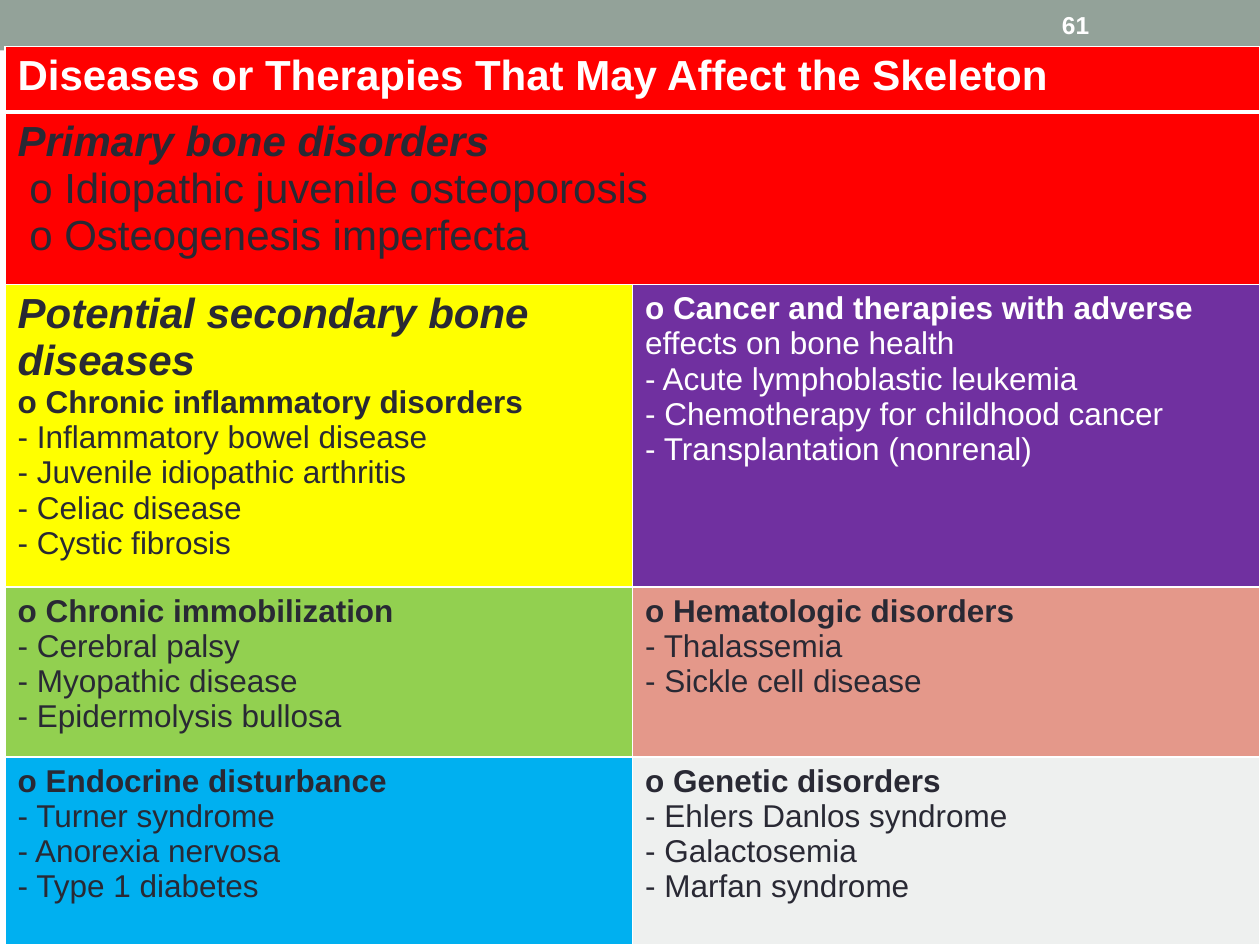
from lxml import etree
from pptx import Presentation
from pptx.dml.color import RGBColor
from pptx.enum.shapes import MSO_SHAPE
from pptx.enum.text import MSO_ANCHOR
from pptx.oxml.ns import qn
from pptx.util import Inches, Pt

RECTANGLE = MSO_SHAPE.RECTANGLE
MIDDLE = MSO_ANCHOR.MIDDLE
FONT = "Arial"
WHITE, DARK, RED = "FFFFFF", "292934", "FF0000"
ROW_HEIGHTS = [0.52, 1.37, 2.25, 1.35, 1.49]

# Each cell: row, column, columns spanned, fill, text colour, paragraphs.
# Each paragraph is a list of (text, size, bold, italic) spans.


def heading(text):
    return [(text, 24, True, True)]


def topic(title, *items):
    return [[(title, 18, True, False)]] + [[("- " + item, 18, False, False)] for item in items]


CELLS = [
    (0, 0, 2, RED, WHITE, [[("Diseases or Therapies That May Affect the Skeleton", 24, True, False)]]),
    (1, 0, 2, RED, DARK, [
        heading("Primary bone disorders"),
        [(" o Idiopathic juvenile osteoporosis", 24, False, False)],
        [(" o Osteogenesis imperfecta", 24, False, False)]]),
    (2, 0, 1, "FFFF00", DARK, [heading("Potential secondary bone diseases")] + topic(
        "o Chronic inflammatory disorders", "Inflammatory bowel disease",
        "Juvenile idiopathic arthritis", "Celiac disease", "Cystic fibrosis")),
    (2, 1, 1, "7030A0", WHITE, [
        [("o Cancer and therapies with adverse ", 18, True, False),
         ("effects on bone health", 18, False, False)]] + topic(
        "", "Acute lymphoblastic leukemia", "Chemotherapy for childhood cancer",
        "Transplantation (nonrenal)")[1:]),
    (3, 0, 1, "92D050", DARK, topic(
        "o Chronic immobilization", "Cerebral palsy", "Myopathic disease", "Epidermolysis bullosa")),
    (3, 1, 1, "E4988A", DARK, topic("o Hematologic disorders", "Thalassemia", "Sickle cell disease")),
    (4, 0, 1, "00B0F0", DARK, topic(
        "o Endocrine disturbance", "Turner syndrome", "Anorexia nervosa", "Type 1 diabetes")),
    (4, 1, 1, "EEF0EF", DARK, topic(
        "o Genetic disorders", "Ehlers Danlos syndrome", "Galactosemia", "Marfan syndrome")),
]


def paint(target, color):
    target.solid()
    target.fore_color.rgb = RGBColor.from_string(color)


def write(frame, paragraphs, color):
    frame.text = "\n".join("".join(text for text, *_ in spans) for spans in paragraphs)
    for para, spans in zip(frame.paragraphs, paragraphs):
        para.text = ""
        for text, size, bold, italic in spans:
            span = para.add_run()
            span.text = text
            font = span.font
            font.name, font.size, font.bold, font.italic = FONT, Pt(size), bold, italic
            font.color.rgb = RGBColor.from_string(color)


def set_borders(cell, bottom_width):
    properties = cell._tc.get_or_add_tcPr()
    widths = {"a:lnL": 1, "a:lnR": 1, "a:lnT": 1, "a:lnB": bottom_width}
    for position, (tag, width) in enumerate(widths.items()):
        line = etree.Element(qn(tag), w=str(Pt(width)))
        fill = etree.SubElement(line, qn("a:solidFill"))
        etree.SubElement(fill, qn("a:srgbClr"), val=WHITE)
        properties.insert(position, line)


def add_header(page, left, top, width, height):
    band = page.shapes.add_shape(RECTANGLE, left, top, width, height)
    band.shadow.inherit = False
    paint(band.fill, "93A299")
    band.line.fill.background()
    box = page.shapes.add_textbox(Inches(8.33), Inches(0.02), Inches(1.17), Inches(0.36))
    box.text_frame.word_wrap = True
    box.text_frame.vertical_anchor = MIDDLE
    write(box.text_frame, [[("61", 14, True, False)]], WHITE)


def add_disease_table(page, left, top, width, height):
    table = page.shapes.add_table(len(ROW_HEIGHTS), 2, left, top, width, height).table
    for row, row_height in zip(table.rows, ROW_HEIGHTS):
        row.height = Inches(row_height)
    for row, column, span, fill, color, paragraphs in CELLS:
        cell = table.cell(row, column)
        if span > 1:
            cell.merge(table.cell(row, column + span - 1))
        write(cell.text_frame, paragraphs, color)
        for part in range(column, column + span):
            paint(table.cell(row, part).fill, fill)
            set_borders(table.cell(row, part), 3 if row == 0 else 1)


def main():
    deck = Presentation()
    deck.slide_width, deck.slide_height = Inches(10), Inches(7.5)
    page = deck.slides.add_slide(deck.slide_layouts[6])
    add_header(page, 0, 0, deck.slide_width, Inches(0.4))
    add_disease_table(page, Inches(0.04), Inches(0.37), Inches(9.96), Inches(sum(ROW_HEIGHTS)))
    deck.save("out.pptx")


if __name__ == "__main__":
    main()
